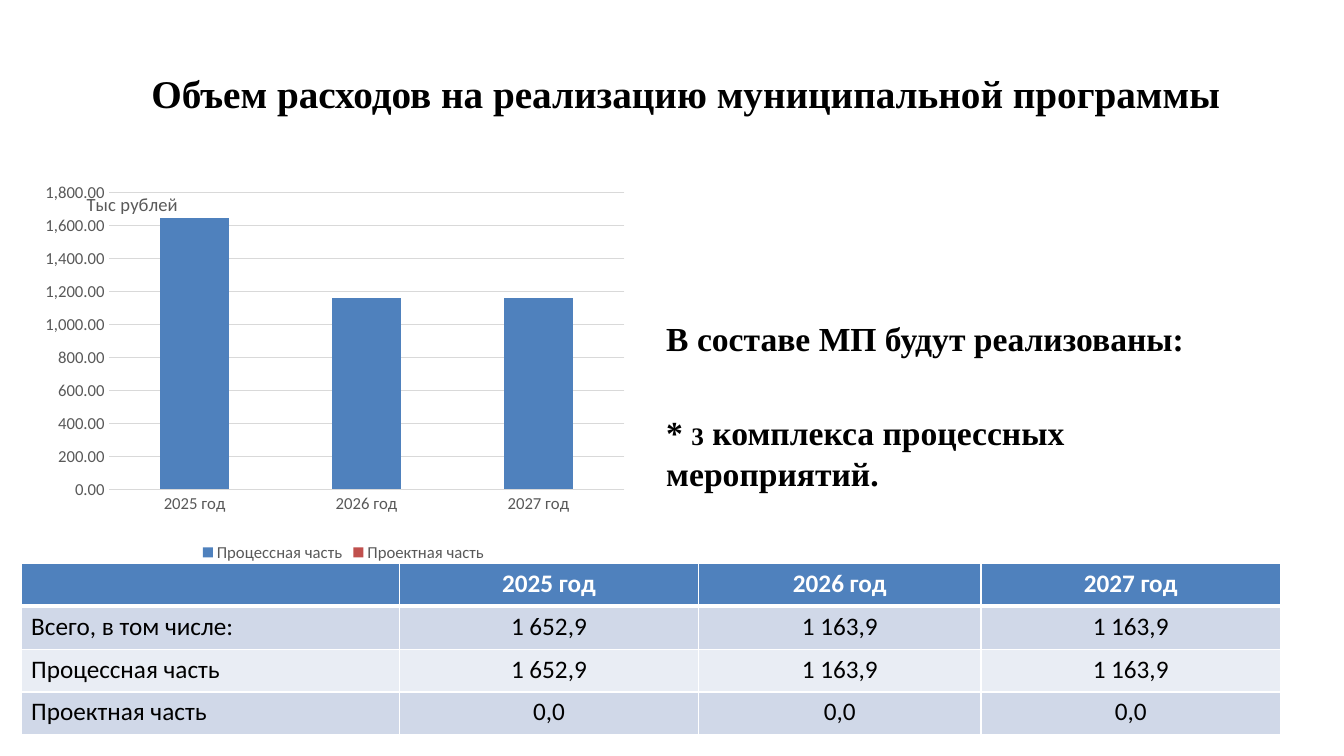
from pptx import Presentation
from pptx.chart.data import CategoryChartData
from pptx.dml.color import RGBColor
from pptx.enum.chart import XL_CHART_TYPE, XL_LEGEND_POSITION, XL_TICK_MARK
from pptx.enum.text import MSO_ANCHOR, PP_ALIGN
from pptx.oxml import parse_xml
from pptx.oxml.ns import nsdecls, qn
from pptx.util import Inches, Pt

LEFT, CENTER = PP_ALIGN.LEFT, PP_ALIGN.CENTER
MIDDLE, BOTTOM = MSO_ANCHOR.MIDDLE, MSO_ANCHOR.BOTTOM
STACKED = XL_CHART_TYPE.COLUMN_STACKED
LEGEND_BOTTOM = XL_LEGEND_POSITION.BOTTOM
NO_TICK = XL_TICK_MARK.NONE

BLACK = RGBColor(0x00, 0x00, 0x00)
WHITE = RGBColor(0xFF, 0xFF, 0xFF)
GRAY = RGBColor(0x59, 0x59, 0x59)
GRID = RGBColor(0xD9, 0xD9, 0xD9)
BLUE = RGBColor(0x4F, 0x81, 0xBD)
RED = RGBColor(0xC0, 0x50, 0x4D)
BAND_DARK = RGBColor(0xD0, 0xD8, 0xE8)
BAND_LIGHT = RGBColor(0xE9, 0xED, 0xF4)
SERIF, SANS = "Times New Roman", "Calibri"

HEADING = "Объем расходов на реализацию муниципальной программы"
COMPOSITION = [
    [("В составе МП будут реализованы:", 24)],
    [("* ", 24), ("3", 18), (" комплекса процессных мероприятий.", 24)],
]
YEARS = ["2025 год", "2026 год", "2027 год"]
EXPENSES = [
    ("Процессная часть", [1650, 1160, 1160], BLUE),
    ("Проектная часть", [0, 0, 0], RED),
]
UNITS = "Тыс рублей"
BUDGET = [
    ["", *YEARS],
    ["Всего, в том числе:", "1 652,9", "1 163,9", "1 163,9"],
    ["Процессная часть", "1 652,9", "1 163,9", "1 163,9"],
    ["Проектная часть", "0,0", "0,0", "0,0"],
]
COLUMN_WIDTHS = [3.75, 2.97, 2.8, 2.97]
BUDGET_HEIGHT = 1.7


def style_font(font, size, color=BLACK, name=SANS, bold=False):
    font.size = Pt(size)
    font.name = name
    font.bold = bold
    font.color.rgb = color


def write_text(paragraph, text, align=LEFT, **style):
    paragraph.alignment = align
    run = paragraph.add_run()
    run.text = text
    style_font(run.font, **style)


def add_frame(slide, left, top, width, height, anchor):
    box = slide.shapes.add_textbox(Inches(left), Inches(top), Inches(width), Inches(height))
    frame = box.text_frame
    frame.word_wrap = True
    frame.vertical_anchor = anchor
    return frame


def place(parent, index, target="", **position):
    for layout in parent.findall(qn("c:layout")):
        parent.remove(layout)
    inner = f'<c:layoutTarget val="{target}"/>' if target else ""
    modes = "".join(f'<c:{key}Mode val="edge"/>' for key in "xy")
    values = "".join(f'<c:{key} val="{value}"/>' for key, value in position.items())
    parent.insert(index, parse_xml(
        f'<c:layout {nsdecls("c")}><c:manualLayout>{inner}{modes}{values}'
        "</c:manualLayout></c:layout>"))


def add_expense_chart(slide):
    data = CategoryChartData(number_format="#,##0.00")
    data.categories = YEARS
    for name, values, _ in EXPENSES:
        data.add_series(name, values)
    chart = slide.shapes.add_chart(
        STACKED, Inches(0.45), Inches(1.3), Inches(5.89), Inches(4.32), data).chart
    style_font(chart.font, 10)
    chart.has_title = False
    chart.has_legend = True
    chart.legend.position = LEGEND_BOTTOM
    chart.legend.include_in_layout = False
    style_font(chart.legend.font, 12, GRAY)

    plot = chart.plots[0]
    plot.vary_by_categories = False
    plot.gap_width, plot.overlap = 150, 100
    for series, (_, _, color) in zip(plot.series, EXPENSES):
        series.format.fill.solid()
        series.format.fill.fore_color.rgb = color

    amounts = chart.value_axis
    for axis in (chart.category_axis, amounts):
        axis.major_tick_mark = axis.minor_tick_mark = NO_TICK
        axis.format.line.fill.background()
        style_font(axis.tick_labels.font, 12, GRAY)
    amounts.minimum_scale, amounts.maximum_scale, amounts.major_unit = 0, 1800, 200
    amounts.tick_labels.number_format = "#,##0.00"
    amounts.tick_labels.number_format_is_linked = False
    amounts.major_gridlines.format.line.color.rgb = GRID
    amounts.major_gridlines.format.line.width = Pt(0.75)

    units = amounts.axis_title
    write_text(units.text_frame.paragraphs[0], UNITS, size=13.3, color=GRAY, align=CENTER)
    units_xml = units._element
    body = units_xml.find(".//" + qn("a:bodyPr"))
    body.set("rot", "0")
    body.set("vert", "horz")
    place(units_xml, 1, x=0.06, y=0.13)
    plot_area = chart._chartSpace.find(".//" + qn("c:plotArea"))
    place(plot_area, 0, "inner", x=0.103, y=0.142, w=0.872, h=0.681)


def set_borders(cell, bottom):
    properties = cell._tc.get_or_add_tcPr()
    for side, width in (("L", 1), ("R", 1), ("T", 1), ("B", bottom)):
        properties.append(parse_xml(
            f'<a:ln{side} {nsdecls("a")} w="{Pt(width)}"><a:solidFill>'
            f'<a:srgbClr val="{WHITE}"/></a:solidFill></a:ln{side}>'))


def add_budget_table(slide):
    table = slide.shapes.add_table(
        len(BUDGET), len(COLUMN_WIDTHS), Inches(0.21), Inches(5.59),
        Inches(sum(COLUMN_WIDTHS)), Inches(BUDGET_HEIGHT)).table
    for column, width in zip(table.columns, COLUMN_WIDTHS):
        column.width = Inches(width)
    for r, entries in enumerate(BUDGET):
        table.rows[r].height = Inches(BUDGET_HEIGHT / len(BUDGET))
        header = r == 0
        fill = BLUE if header else (BAND_LIGHT, BAND_DARK)[r % 2]
        for c, entry in enumerate(entries):
            cell = table.cell(r, c)
            set_borders(cell, bottom=3 if header else 1)
            cell.fill.solid()
            cell.fill.fore_color.rgb = fill
            if entry:
                write_text(cell.text_frame.paragraphs[0], entry, size=18, bold=header,
                           color=WHITE if header else BLACK, align=CENTER if c else LEFT)


def main():
    deck = Presentation()
    deck.slide_width, deck.slide_height = Inches(13.33), Inches(7.5)
    slide = deck.slides.add_slide(deck.slide_layouts[6])

    heading = add_frame(slide, 0.65, 0.3, 12.3, 1.25, MIDDLE)
    write_text(heading.paragraphs[0], HEADING, size=28, name=SERIF, bold=True, align=CENTER)

    add_expense_chart(slide)

    composition = add_frame(slide, 6.51, 1.87, 6.14, 3.71, BOTTOM)
    composition.margin_bottom = Inches(0.69)
    for i, pieces in enumerate(COMPOSITION):
        paragraph = composition.add_paragraph() if i else composition.paragraphs[0]
        paragraph.line_spacing = Pt(29.3)
        paragraph.space_before = Pt(37.3 * i)
        for text, size in pieces:
            write_text(paragraph, text, size=size, name=SERIF, bold=True)

    add_budget_table(slide)
    deck.save("out.pptx")


if __name__ == "__main__":
    main()
